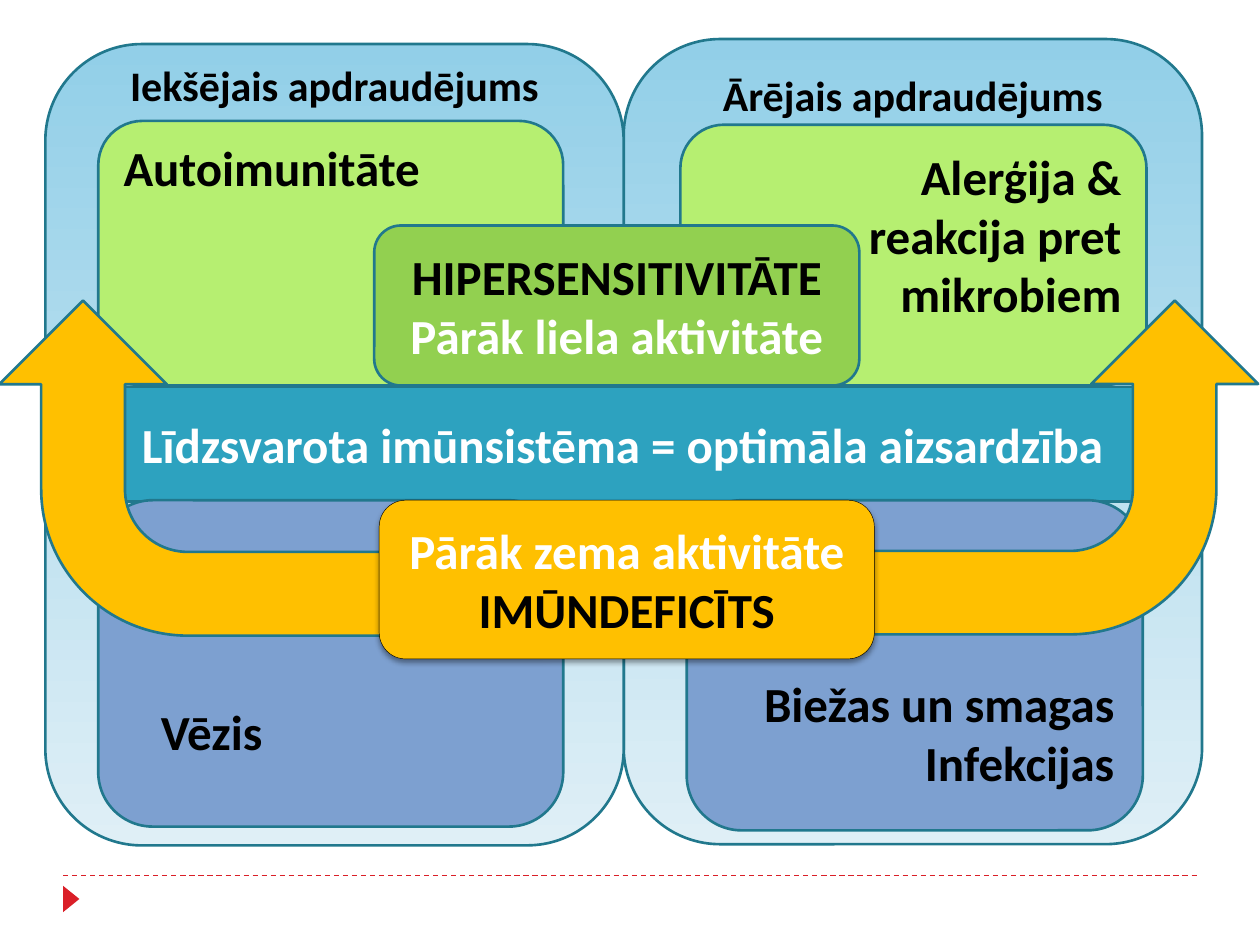
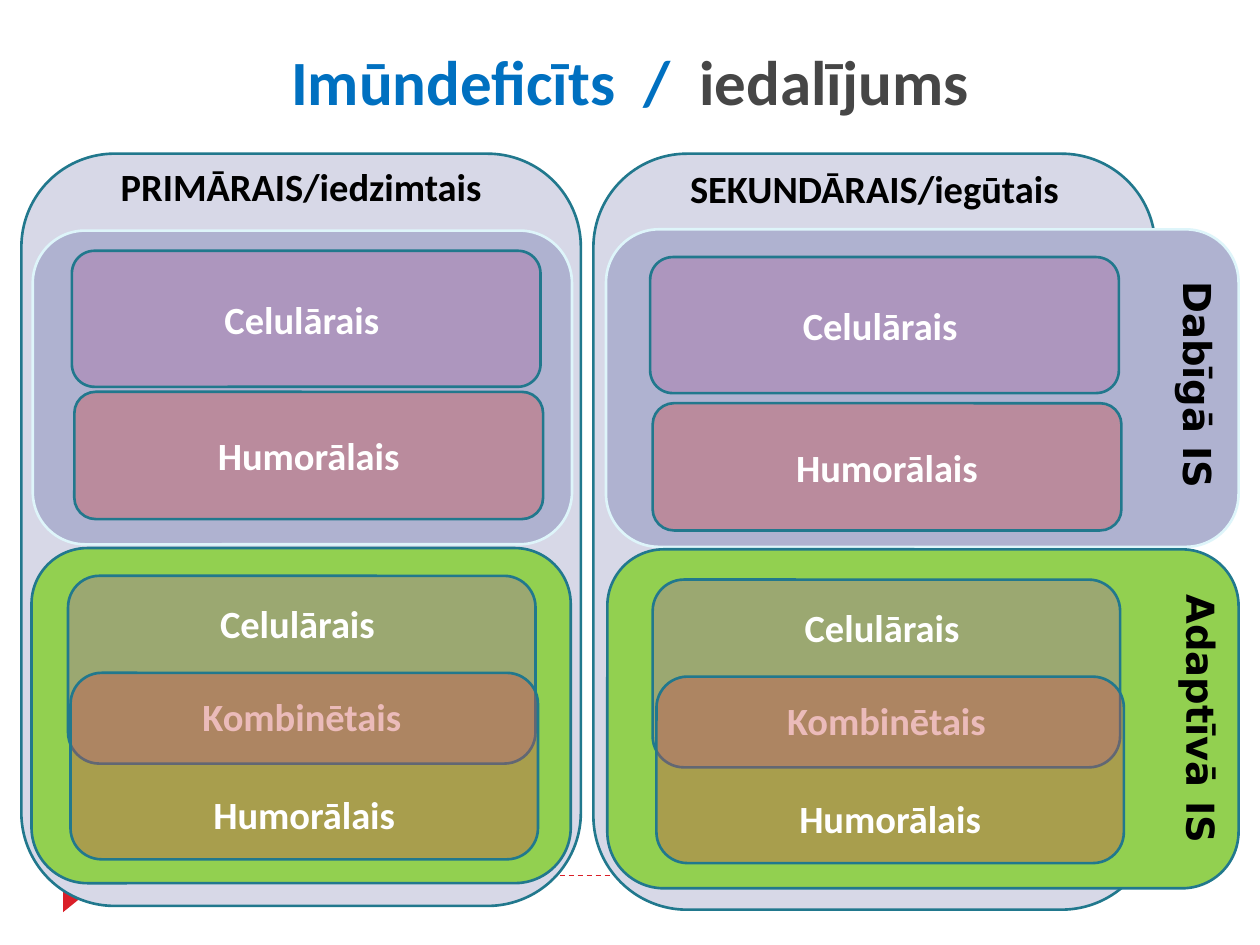
from dataclasses import dataclass
from lxml import etree
from pptx import Presentation, util as u
from pptx.dml.color import RGBColor
from pptx.enum import dml, shapes, text
from pptx.oxml.ns import qn

PX = 9144
ROUND, BENT = shapes.MSO_SHAPE.ROUNDED_RECTANGLE, shapes.MSO_SHAPE.BENT_ARROW
LEFT, CENTER, RIGHT = text.PP_ALIGN.LEFT, text.PP_ALIGN.CENTER, text.PP_ALIGN.RIGHT
TOP, MIDDLE, BOTTOM = text.MSO_ANCHOR.TOP, text.MSO_ANCHOR.MIDDLE, text.MSO_ANCHOR.BOTTOM


@dataclass(frozen=True)
class Theme:
    font: str = "Calibri"
    side_font: str = "DejaVu Sans"
    title: int = 36
    large: int = 28
    heading: int = 24
    body: int = 22
    black: str = "000000"
    white: str = "FFFFFF"
    blue: str = "0070C0"
    grey: str = "464646"
    red: str = "DA1F28"
    outline: str = "21788D"
    pale_outline: str = "DEF5FA"
    sky: tuple = ("92CFE8", "DFEFF6")
    teal: str = "2DA2BF"
    lime: str = "B6EF71"
    green: str = "92D050"
    steel: str = "7DA0D0"
    amber: str = "FFC000"
    lavender: str = "D7D8E7"
    violet: str = "AFB2D0"
    cellular: tuple = ("AA6CA3", 40)
    humoral: tuple = ("CC4D4A", 38)


T = Theme()

THREAT_PANELS = [
    ((495, 31, 459, 639), "Ārējais apdraudējums", 75),
    ((36, 35, 459, 636), "Iekšējais apdraudējums", 67),
]
BALANCE = ((64, 307, 860, 91), "Līdzsvarota imūnsistēma = optimāla aizsardzība")
DISORDERS = [
    ((540, 99, 370, 207), T.lime, ["Alerģija &", "reakcija pret mikrobiem"], RIGHT, (10, 7)),
    ((545, 397, 362, 262), T.steel, ["Biežas un smagas", "Infekcijas"], RIGHT, (10, 125)),
    ((78, 96, 369, 210), T.lime, ["Autoimunitāte"], LEFT, (10, 3)),
    ((78, 397, 369, 259), T.steel, ["Vēzis"], LEFT, (37, 147)),
]
HYPER = ((297, 179, 385, 127), T.green,
         [("HIPERSENSITIVITĀTE", T.black), ("Pārāk liela aktivitāte", T.white)])
DEFICIT = ((301, 397, 393, 126), T.amber,
           [("Pārāk zema aktivitāte", T.white), ("IMŪNDEFICĪTS", T.black)])
ARROWS = [((20, 218, 266, 307), False), ((708, 213, 265, 316), True)]

TITLE = [("Imūndeficīts  / ", T.blue), (" iedalījums", T.grey)]
CLASS_PANELS = [
    ((17, 122, 444, 597), "PRIMĀRAIS/iedzimtais", 148),
    ((471, 122, 446, 600), "SEKUNDĀRAIS/iegūtais", 149),
]
SYSTEMS = [
    ((26, 183, 428, 249), T.violet, T.pale_outline),
    ((481, 182, 502, 252), T.violet, T.pale_outline),
    ((25, 435, 428, 266), T.green, T.outline),
    ((482, 436, 501, 269), T.green, T.outline),
]
SIDE_LABELS = [((856, 285, 190, 47), "Dabīgā IS"), ((842, 550, 223, 47), "Adaptīvā IS")]
CELLULAR, HUMORAL, COMBINED = "Celulārais ", "Humorālais", "Kombinētais"
INNATE = [((57, 199), (59, 311)), ((516, 204), (518, 320))]
ADAPTIVE = [((54, 457), (56, 534)), ((518, 460), (521, 537))]


def rgb(code):
    return RGBColor.from_string(code)


def px(*values):
    return [v * PX for v in values]


def style(font, size, color=None, name=T.font):
    font.name, font.size, font.bold = name, u.Pt(size), True
    if color:
        font.color.rgb = rgb(color)


def write(sp, lines, size, color=T.black, align=CENTER, anchor=MIDDLE, name=T.font, gap=0):
    tf = sp.text_frame
    tf.word_wrap = True
    tf.vertical_anchor = anchor
    for i, line in enumerate(lines):
        words, ink = line if isinstance(line, tuple) else (line, color)
        p = tf.add_paragraph() if i else tf.paragraphs[0]
        p.text, p.alignment = words, align
        if i and gap:
            p.space_before = u.Pt(gap)
        style(p.font, size, ink, name)
    return tf


def add_effects(sp):
    return etree.SubElement(sp.element.spPr, qn("a:effectLst"))


def add_box(s, box, fill, line=T.outline, width=1.5, kind=ROUND):
    sp = s.shapes.add_shape(kind, *px(*box))
    sp.shadow.inherit = False
    if isinstance(fill, tuple) and isinstance(fill[1], int):
        sp.fill.solid()
        sp.fill.fore_color.rgb = rgb(fill[0])
        clr = sp.element.spPr.find(qn("a:solidFill"))[0]
        etree.SubElement(clr, qn("a:alpha"), val=str(fill[1] * 1000))
    elif isinstance(fill, tuple):
        sp.fill.gradient()
        sp.fill.gradient_angle = 270
        for stop, code in zip(sp.fill.gradient_stops, fill):
            stop.color.rgb = rgb(code)
    else:
        sp.fill.solid()
        sp.fill.fore_color.rgb = rgb(fill)
    if line:
        sp.line.color.rgb = rgb(line)
        sp.line.width = u.Pt(width)
    else:
        sp.line.fill.background()
    return sp


def add_panels(s, panels, fill, size):
    for box, _, _ in panels:
        add_box(s, box, fill)
    for (x, _, w, _), heading, middle in panels:
        tb = s.shapes.add_textbox(*px(x, middle - 25, w, 50))
        write(tb, [heading], size)


def add_footer(prs, s):
    ln = s.shapes.add_connector(shapes.MSO_CONNECTOR.STRAIGHT, *px(50, 695, 950, 695))
    ln.line.color.rgb = rgb(T.red)
    ln.line.width = u.Pt(0.75)
    ln.line.dash_style = dml.MSO_LINE.DASH
    add_effects(ln)
    sp = add_box(s, (46, 707, 21, 13), T.red, None, kind=shapes.MSO_SHAPE.ISOSCELES_TRIANGLE)
    sp.rotation = 90
    for part in (ln, sp):
        prs.slide_master.shapes.element.append(part.element)


def build_balance(prs):
    s = prs.slides.add_slide(prs.slide_layouts[6])
    add_panels(s, THREAT_PANELS, T.sky, T.heading)
    box, words = BALANCE
    sp = add_box(s, box, T.teal)
    sp.adjustments[0] = 0
    write(sp, [words], T.large, T.white)
    for box, fill, lines, align, (side, top) in DISORDERS:
        tf = write(add_box(s, box, fill), lines, T.large, align=align, anchor=TOP)
        tf.margin_left = tf.margin_right = side * PX
        tf.margin_top = top * PX
    box, fill, lines = HYPER
    write(add_box(s, box, fill), lines, T.large)
    for box, flipped in ARROWS:
        sp = add_box(s, box, T.amber, kind=BENT)
        sp.rotation = 270
        if flipped:
            sp.element.spPr.find(qn("a:xfrm")).set("flipV", "1")
    box, fill, lines = DEFICIT
    sp = add_box(s, box, fill, T.black, 0.25)
    write(sp, lines, T.large)
    shadow = etree.SubElement(sp.element.spPr.find(qn("a:effectLst")), qn("a:outerShdw"),
                              blurRad=str(u.Pt(3)), dist=str(u.Pt(2)), dir="5400000", rotWithShape="0")
    clr = etree.SubElement(shadow, qn("a:srgbClr"), val=T.black)
    etree.SubElement(clr, qn("a:alpha"), val="40000")


def build_classes(prs):
    s = prs.slides.add_slide(prs.slide_layouts[5])
    title = s.shapes.title
    title.left, title.top, title.width, title.height = px(0, 25, 1000, 74)
    tf = title.text_frame
    tf.vertical_anchor, tf.auto_size = BOTTOM, text.MSO_AUTO_SIZE.NONE
    p = tf.paragraphs[0]
    p.alignment = CENTER
    style(p.font, T.title)
    for words, ink in TITLE:
        r = p.add_run()
        r.text = words
        r.font.color.rgb = rgb(ink)
    add_panels(s, CLASS_PANELS, T.lavender, T.body)
    for box, fill, line in SYSTEMS:
        add_box(s, box, fill, line)
    for box, words in SIDE_LABELS:
        tb = s.shapes.add_textbox(*px(*box))
        tb.rotation = 90
        tf = write(tb, [words], T.body, align=LEFT, anchor=TOP, name=T.side_font)
        tf.word_wrap = False
    for cell, humor in INNATE:
        write(add_box(s, (*cell, 372, 108), T.cellular), [CELLULAR], T.body, T.white)
        write(add_box(s, (*humor, 372, 101), T.humoral), [HUMORAL], T.body, T.white)
    for cell, humor in ADAPTIVE:
        write(add_box(s, (*cell, 371, 149), T.cellular), [CELLULAR, COMBINED],
              T.body, T.white, gap=27)
        tf = write(add_box(s, (*humor, 371, 148), T.humoral), [HUMORAL],
                   T.body, T.white, anchor=BOTTOM)
        tf.margin_bottom = 10 * PX
    return s


def main():
    prs = Presentation()
    prs.slide_width, prs.slide_height = px(1000, 750)
    build_balance(prs)
    add_footer(prs, build_classes(prs))
    prs.save("out.pptx")


if __name__ == "__main__":
    main()
